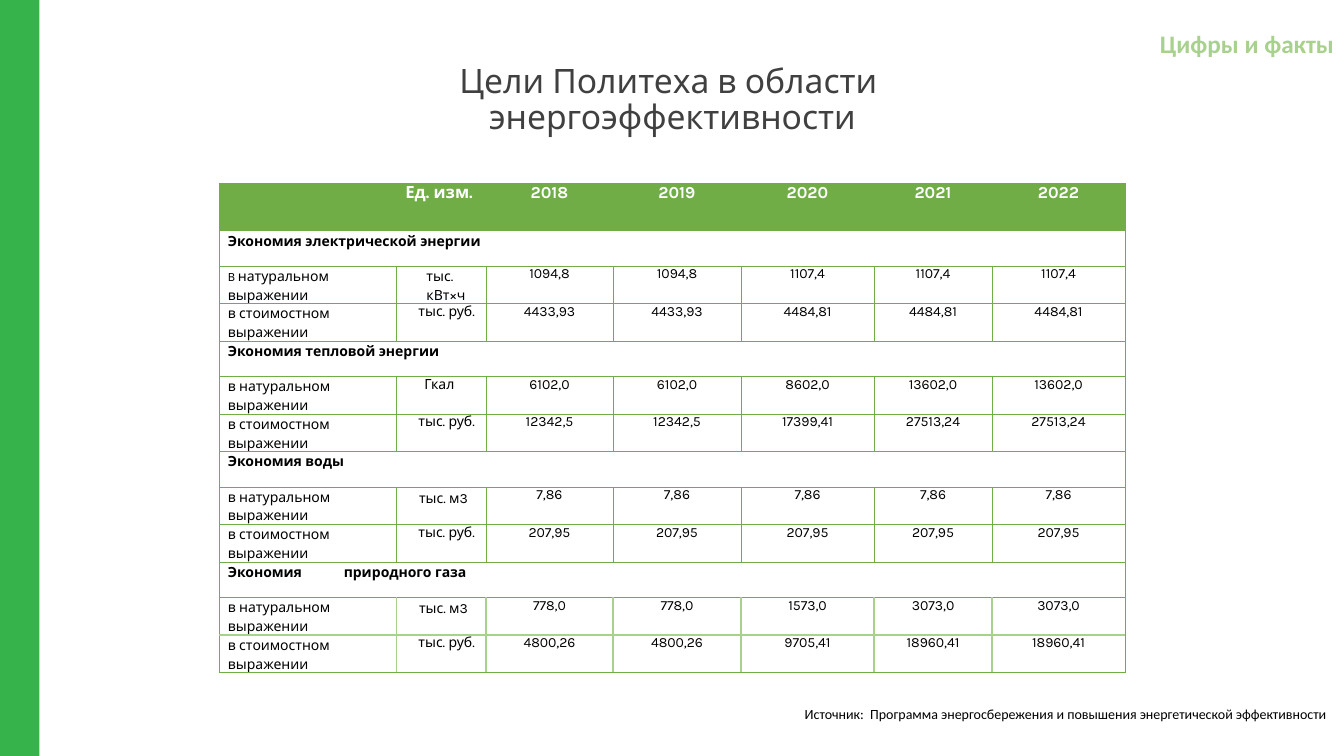
import pptx
import pptx.util
import pptx.dml.color
import pptx.enum.shapes
import pptx.enum.text
import pptx.oxml.ns
import lxml.etree

Inches, Pt = pptx.util.Inches, pptx.util.Pt
ALIGN = pptx.enum.text.PP_ALIGN
COLORS = {"stripe": "37B34B", "green": "70AD47", "light": "A9D18E",
          "title": "404040", "black": "000000", "white": "FFFFFF"}
YEARS = ["2018", "2019", "2020", "2021", "2022"]
NATURAL, COST = "в натуральном выражении", "в стоимостном выражении"
SAVINGS = [
    ("Экономия электрической энергии", "тыс. кВт×ч",
     ["1094,8", "1094,8", "1107,4", "1107,4", "1107,4"],
     ["4433,93", "4433,93", "4484,81", "4484,81", "4484,81"]),
    ("Экономия тепловой энергии", "Гкал",
     ["6102,0", "6102,0", "8602,0", "13602,0", "13602,0"],
     ["12342,5", "12342,5", "17399,41", "27513,24", "27513,24"]),
    ("Экономия воды", "тыс. м3", ["7,86"] * 5, ["207,95"] * 5),
    ("Экономия\tприродного газа", "тыс. м3",
     ["778,0", "778,0", "1573,0", "3073,0", "3073,0"],
     ["4800,26", "4800,26", "9705,41", "18960,41", "18960,41"]),
]
UNIT_LAYOUT = {
    "тыс. кВт×ч": {"left": 0.3, "spacing": 13.4},
    "Гкал": {"left": 0.28},
    "тыс. м3": {"align": ALIGN.RIGHT, "right": 0.18, "spacing": 14.3},
    "тыс. руб.": {"align": ALIGN.RIGHT, "right": 0.11},
}
COLUMN_WIDTHS = [1.75, 0.89, 1.26, 1.27, 1.32, 1.17, 1.32]
HEADER_HEIGHT, SECTION_HEIGHT, VALUE_HEIGHT = 0.47, 0.35, 0.37


def rgb(name):
    """Return the named colour."""
    return pptx.dml.color.RGBColor.from_string(COLORS[name])


def style(paragraph, size, color, font="Karla", bold=False):
    """Set the font of a whole paragraph."""
    paragraph.font.name = font
    paragraph.font.size = Pt(size)
    paragraph.font.bold = bold
    paragraph.font.color.rgb = rgb(color)


def add_stripe(slide, left, top, width, height):
    """Draw the green stripe along the slide edge."""
    stripe = slide.shapes.add_shape(
        pptx.enum.shapes.MSO_SHAPE.RECTANGLE,
        Inches(left), Inches(top), Inches(width), Inches(height))
    stripe.shadow.inherit = False
    stripe.fill.solid()
    stripe.fill.fore_color.rgb = rgb("stripe")
    stripe.line.fill.background()


def add_caption(slide, box, text, align, size, color, font, bold=False, spacing=None):
    """Place one paragraph of text in the given box."""
    caption = slide.shapes.add_textbox(*map(Inches, box))
    caption.text_frame.word_wrap = True
    paragraph = caption.text_frame.paragraphs[0]
    paragraph.text = text
    paragraph.alignment = align
    paragraph.line_spacing = spacing
    style(paragraph, size, color, font, bold)


def set_borders(cell, sides):
    """Draw cell borders from (colour, points) pairs in left, right, top, bottom order."""
    properties = cell._tc.get_or_add_tcPr()
    for position, (tag, (color, points)) in enumerate(zip(("lnL", "lnR", "lnT", "lnB"), sides)):
        border = lxml.etree.Element(pptx.oxml.ns.qn("a:" + tag), w=str(int(Pt(points))))
        fill = lxml.etree.SubElement(border, pptx.oxml.ns.qn("a:solidFill"))
        lxml.etree.SubElement(fill, pptx.oxml.ns.qn("a:srgbClr"), val=COLORS[color])
        properties.insert(position, border)


def write_cell(cell, text, size=10, color="black", bold=False, align=ALIGN.LEFT,
               left=0, right=0, spacing=None, tab=None):
    """Write one paragraph into a table cell."""
    paragraph = cell.text_frame.paragraphs[0]
    paragraph.text = text
    paragraph.alignment = align
    if spacing:
        paragraph.line_spacing = Pt(spacing)
    properties = paragraph._p.get_or_add_pPr()
    properties.set("marL", str(Inches(left)))
    properties.set("marR", str(Inches(right)))
    if tab:
        tabs = lxml.etree.SubElement(properties, pptx.oxml.ns.qn("a:tabLst"))
        lxml.etree.SubElement(tabs, pptx.oxml.ns.qn("a:tab"), pos=str(Inches(tab)), algn="l")
    style(paragraph, size, color, bold=bold)


def write_value_row(table, row, label, unit, values):
    """Fill one row with its label, unit and yearly values."""
    write_cell(table.cell(row, 0), label, left=0.08, spacing=13.4)
    write_cell(table.cell(row, 1), unit, **UNIT_LAYOUT[unit])
    for column, value in enumerate(values, 2):
        write_cell(table.cell(row, column), value, align=ALIGN.CENTER)


def format_grid(table):
    """Set the margins, fills and borders of every cell."""
    last_row, last_column = len(table.rows) - 1, len(table.columns) - 1
    plain, accent = ("green", 0.5), ("light", 1)
    for row in range(last_row + 1):
        for column in range(last_column + 1):
            cell = table.cell(row, column)
            cell.margin_left = cell.margin_right = cell.margin_top = cell.margin_bottom = 0
            if row == 0:
                cell.fill.solid()
                cell.fill.fore_color.rgb = rgb("green")
            else:
                cell.fill.background()
            inner = accent if row >= last_row - 1 else plain
            set_borders(cell, (
                plain if column == 0 else inner,
                plain if column == last_column else inner,
                accent if row == last_row else plain,
                accent if row == last_row - 1 else plain))


def add_savings_table(slide, left, top):
    """Build the table of savings by resource and year."""
    heights = [HEADER_HEIGHT] + [SECTION_HEIGHT, VALUE_HEIGHT, VALUE_HEIGHT] * len(SAVINGS)
    frame = slide.shapes.add_table(
        len(heights), len(COLUMN_WIDTHS), Inches(left), Inches(top),
        Inches(sum(COLUMN_WIDTHS)), Inches(sum(heights)))
    table = frame.table
    table.first_row = table.horz_banding = False
    for column, width in zip(table.columns, COLUMN_WIDTHS):
        column.width = Inches(width)
    for row, height in zip(table.rows, heights):
        row.height = Inches(height)
    format_grid(table)

    write_cell(table.cell(0, 0), "", 12, "white")
    write_cell(table.cell(0, 1), "Ед. изм.", 12, "white", True, ALIGN.RIGHT, right=0.13)
    for column, year in enumerate(YEARS, 2):
        write_cell(table.cell(0, column), year, 12, "white", True, ALIGN.CENTER)
    for index, (resource, unit, amounts, costs) in enumerate(SAVINGS):
        row = 1 + 3 * index
        section = table.cell(row, 0)
        section.merge(table.cell(row, len(COLUMN_WIDTHS) - 1))
        write_cell(section, resource, bold=True, left=0.08, spacing=13.4,
                   tab=1.15 if "\t" in resource else None)
        write_value_row(table, row + 1, NATURAL, unit, amounts)
        write_value_row(table, row + 2, COST, "тыс. руб.", costs)

    first_label = table.cell(2, 0).text_frame.paragraphs[0]
    preposition, words = NATURAL.split(" ", 1)
    first_label.runs[0].text = preposition + " "
    first_label.runs[0]._r.get_or_add_rPr().set("cap", "small")
    first_label.add_run().text = words


def build_goals_slide(presentation):
    """Build the slide on energy efficiency goals."""
    slide = presentation.slides.add_slide(presentation.slide_layouts[6])
    add_stripe(slide, 0, 0, 0.39, 7.5)
    add_caption(slide, (10.76, 0.23, 2.57, 0.4), "Цифры и факты",
                ALIGN.RIGHT, 18, "light", "Calibri", bold=True)
    add_caption(slide, (0.92, 0.59, 11.5, 1.45), "Цели Политеха в области \vэнергоэффективности",
                ALIGN.CENTER, 24, "title", "Karla", spacing=0.9)
    add_caption(slide, (7.59, 6.95, 5.66, 0.27),
                "Источник:  Программа энергосбережения и повышения энергетической эффективности",
                ALIGN.RIGHT, 10, "black", "Calibri")
    add_savings_table(slide, 2.18, 1.82)


def main():
    """Create and save the presentation."""
    presentation = pptx.Presentation()
    presentation.slide_width, presentation.slide_height = Inches(13.33), Inches(7.5)
    build_goals_slide(presentation)
    presentation.save("out.pptx")


if __name__ == "__main__":
    main()
